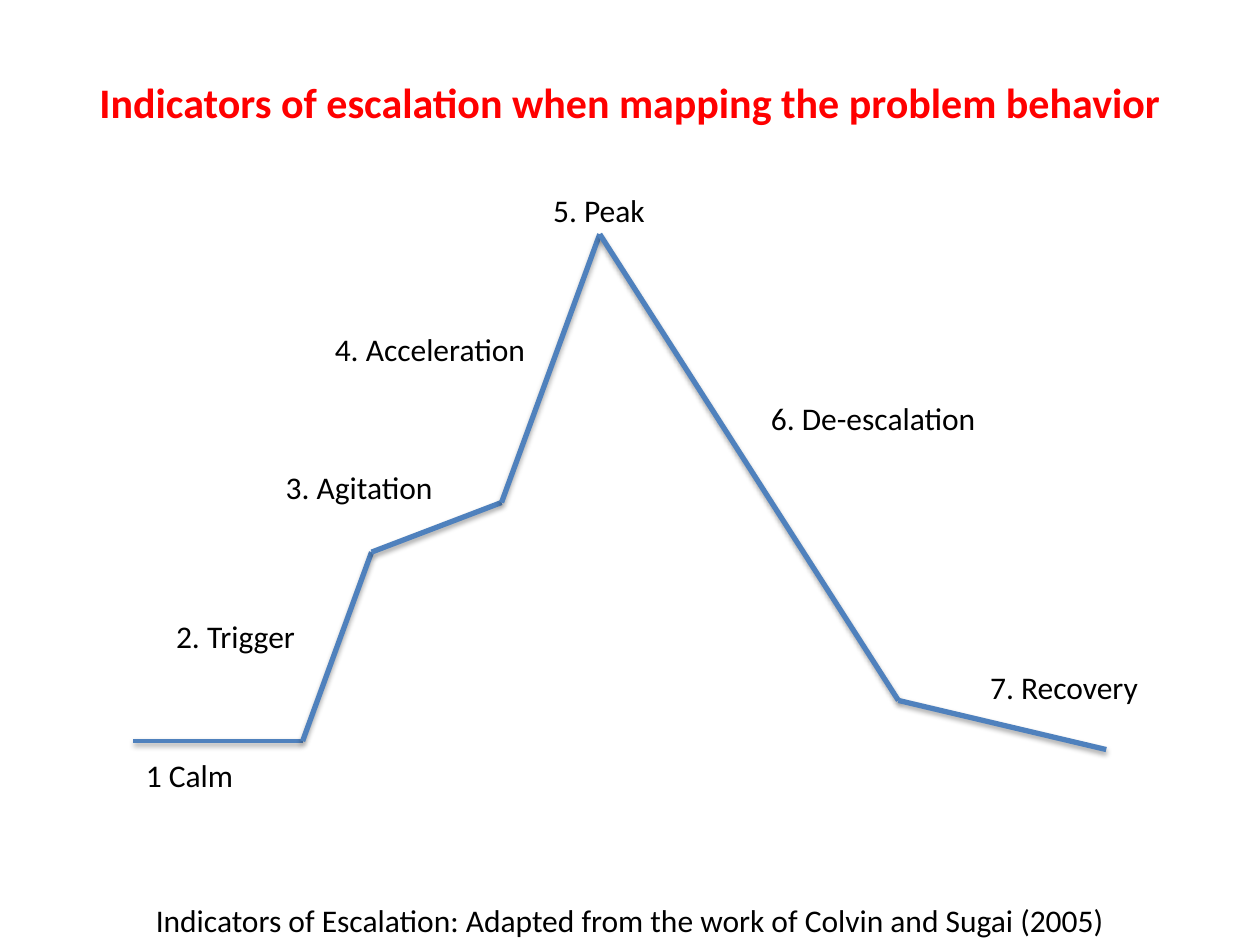
import dataclasses
import itertools

import pptx
import pptx.dml.color
import pptx.enum.shapes
import pptx.enum.text
import pptx.oxml
import pptx.oxml.ns
import pptx.util

Cm = pptx.util.Cm
Pt = pptx.util.Pt


@dataclasses.dataclass
class Theme:
    font: str = "Calibri"
    title_color: str = "FF0000"
    text_color: str = "000000"
    curve_color: str = "4F81BD"
    shadow_color: str = "000000"
    title_size: int = 24
    text_size: int = 18


class SlideBuilder:
    def __init__(self, slide, theme):
        self.slide = slide
        self.theme = theme

    def add_span(self, frame, text, size, color, bold=False, centered=False):
        para = frame.paragraphs[0]
        if centered:
            para.alignment = pptx.enum.text.PP_ALIGN.CENTER
        span = para.add_run()
        span.text = text
        span.font.name = self.theme.font
        span.font.size = Pt(size)
        span.font.bold = bold
        span.font.color.rgb = pptx.dml.color.RGBColor.from_string(color)

    def title(self, text, left, top, width, height):
        box = self.slide.shapes.title
        box.left, box.top, box.width, box.height = map(Cm, (left, top, width, height))
        box.text_frame.vertical_anchor = pptx.enum.text.MSO_ANCHOR.MIDDLE
        self.add_span(box.text_frame, text, self.theme.title_size,
                      self.theme.title_color, bold=True, centered=True)

    def text(self, shapes, text, left, top, width, wrap=False, centered=False):
        box = shapes.add_textbox(Cm(left), Cm(top), Cm(width), Cm(1.02))
        box.text_frame.word_wrap = wrap
        box.text_frame.auto_size = pptx.enum.text.MSO_AUTO_SIZE.SHAPE_TO_FIT_TEXT
        self.add_span(box.text_frame, text, self.theme.text_size,
                      self.theme.text_color, centered=centered)

    def line(self, shapes, start, end, weight, shadow_distance, shadow_opacity):
        line = shapes.add_connector(pptx.enum.shapes.MSO_CONNECTOR.STRAIGHT,
                                    *map(Cm, start + end))
        line.line.width = Pt(weight)
        line.line.color.rgb = pptx.dml.color.RGBColor.from_string(self.theme.curve_color)
        # Soft shadow falling straight down
        line._element.spPr.append(pptx.oxml.parse_xml(
            f'<a:effectLst {pptx.oxml.ns.nsdecls("a")}>'
            f'<a:outerShdw blurRad="{Pt(3.1)}" dist="{Pt(shadow_distance)}" '
            f'dir="5400000" rotWithShape="0">'
            f'<a:srgbClr val="{self.theme.shadow_color}">'
            f'<a:alpha val="{shadow_opacity * 1000}"/></a:srgbClr>'
            f'</a:outerShdw></a:effectLst>'))


# Turning points of the escalation curve, in cm
CURVE = [(2.69, 14.94), (6.1, 14.94), (7.49, 11.13), (10.11, 10.13),
         (12.09, 4.72), (18.11, 14.12), (22.3, 15.11)]

# Phase name, left, top, width in cm
PHASES = [
    ("1 Calm", 2.69, 15.11, 2.74),
    ("2. Trigger", 3.3, 12.32, 3.07),
    ("3. Agitation", 5.51, 9.32, 3.51),
    ("4. Acceleration", 6.5, 6.53, 4.39),
    ("5. Peak", 10.9, 3.73, 2.51),
    ("6. De-escalation", 15.29, 7.92, 4.7),
    ("7. Recovery", 19.71, 13.34, 3.53),
]


def main():
    deck = pptx.Presentation()
    deck.slide_width, deck.slide_height = Cm(25.4), Cm(19.05)
    page = deck.slides.add_slide(deck.slide_layouts.get_by_name("Title Only"))
    builder = SlideBuilder(page, Theme())

    # Title and source note
    builder.title("Indicators of escalation when mapping the problem behavior",
                  1.27, 0.76, 22.86, 2.57)
    builder.text(page.shapes,
                 "Indicators of Escalation: Adapted from the work of Colvin and Sugai (2005)",
                 0, 18.03, 25.4, wrap=True, centered=True)

    # Escalation curve: the calm phase is drawn thinner
    diagram = page.shapes.add_group_shape().shapes
    for index, (start, end) in enumerate(itertools.pairwise(CURVE)):
        weight, distance, opacity = (2, 1.6, 38) if index == 0 else (3, 1.8, 35)
        builder.line(diagram, start, end, weight, distance, opacity)

    # Phase labels
    for name, left, top, width in PHASES:
        builder.text(diagram, name, left, top, width)

    deck.save("out.pptx")


if __name__ == "__main__":
    main()
